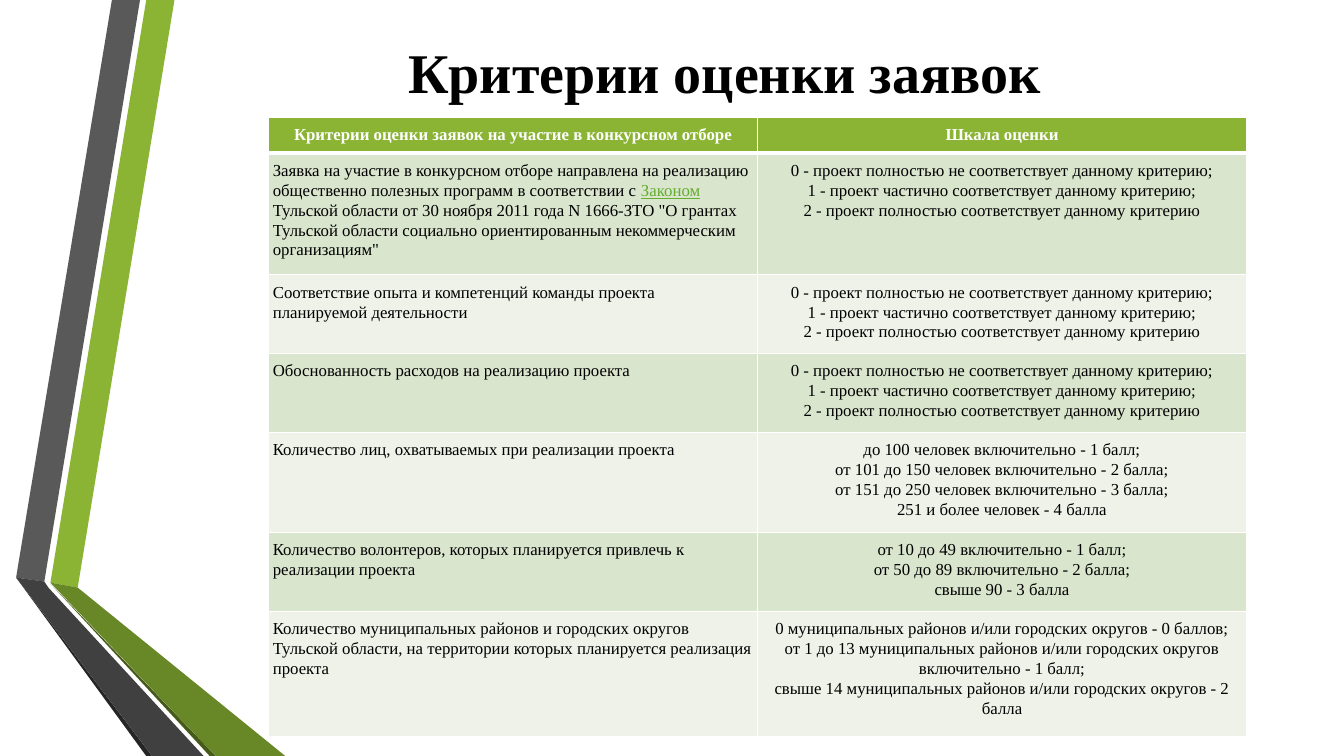
"""Build a slide with a table of grant application criteria beside a folded ribbon."""
import pptx
import pptx.dml.color
import pptx.enum.text
import pptx.oxml
import pptx.oxml.ns
import pptx.util

RGB = pptx.dml.color.RGBColor
ALIGN = pptx.enum.text.PP_ALIGN
FONT = "Times New Roman"
BLACK = RGB(0x00, 0x00, 0x00)
WHITE = RGB(0xFF, 0xFF, 0xFF)
GREEN = RGB(0x8B, 0xB4, 0x34)
OLIVE = RGB(0x68, 0x87, 0x27)
MOSS = RGB(0x46, 0x5A, 0x1A)
GREY = RGB(0x59, 0x59, 0x59)
DARK = RGB(0x40, 0x40, 0x40)
COAL = RGB(0x26, 0x26, 0x26)
LINK = RGB(0x65, 0xAD, 0x30)
BANDS = [RGB(0xEE, 0xF2, 0xE8), RGB(0xDA, 0xE5, 0xCE)]

deck = pptx.Presentation()
deck.slide_width = pptx.util.Inches(13.33)
deck.slide_height = pptx.util.Inches(7.5)
slide = deck.slides.add_slide(deck.slide_layouts[6])


def spot(x, y):
    """Turn percent shares of the slide into lengths."""
    return int(deck.slide_width * x / 100), int(deck.slide_height * y / 100)


def write(par, text, size, color, bold=False):
    """Add one run of text."""
    run = par.add_run()
    run.text = text
    run.font.name = FONT
    run.font.size = pptx.util.Pt(size)
    run.font.bold = bold
    run.font.color.rgb = color
    return run


folds = [
    (GREEN, [(3.75, 77.07), (5.78, 77.73), (12.98, 0), (10.88, 0)]),
    (GREY, [(10.42, 0), (8.33, 0), (1.2, 76.4), (3.3, 76.93)]),
    (COAL, [(1.2, 76.4), (10.88, 100), (11.32, 100)]),
    (MOSS, [(3.75, 77.2), (15.6, 100), (16.05, 100)]),
    (OLIVE, [(3.75, 77.07), (16.05, 100), (21.22, 100), (5.78, 77.73)]),
    (DARK, [(15.15, 100), (3.6, 77.73), (3.3, 76.93), (1.2, 76.4), (11.32, 100)]),
]
for color, points in folds:
    first, *rest = [spot(x, y) for x, y in points]
    path = slide.shapes.build_freeform(*first)
    path.add_line_segments(rest, close=True)
    fold = path.convert_to_shape()
    fold.shadow.inherit = False
    fold.fill.solid()
    fold.fill.fore_color.rgb = color
    fold.line.fill.background()

title = slide.shapes.add_textbox(*spot(13.43, 3.33), *spot(80.95, 12.13)).text_frame
title.word_wrap = True
title.vertical_anchor = pptx.enum.text.MSO_ANCHOR.MIDDLE
title.paragraphs[0].alignment = ALIGN.CENTER
write(title.paragraphs[0], "Критерии оценки заявок", 40, BLACK, True)

scale = [
    "0 - проект полностью не соответствует данному критерию;",
    "1 - проект частично соответствует данному критерию;",
    "2 - проект полностью соответствует данному критерию",
]
rows = [
    (4.67, "Критерии оценки заявок на участие в конкурсном отборе", ["Шкала оценки"]),
    (14, "Заявка на участие в конкурсном отборе направлена на реализацию "
         "общественно полезных программ в соответствии с Законом Тульской области "
         "от 30 ноября 2011 года N 1666-ЗТО \"О грантах Тульской области "
         "социально ориентированным некоммерческим организациям\"", scale),
    (9.07, "Соответствие опыта и компетенций команды проекта планируемой деятельности", scale),
    (9.07, "Обоснованность расходов на реализацию проекта", scale),
    (11.47, "Количество лиц, охватываемых при реализации проекта", [
        "до 100 человек включительно - 1 балл;",
        "от 101 до 150 человек включительно - 2 балла;",
        "от 151 до 250 человек включительно - 3 балла;",
        "251 и более человек - 4 балла"]),
    (9.07, "Количество волонтеров, которых планируется привлечь к реализации проекта", [
        "от 10 до 49 включительно - 1 балл;",
        "от 50 до 89 включительно - 2 балла;",
        "свыше 90 - 3 балла"]),
    (16.53, "Количество муниципальных районов и городских округов Тульской области, "
            "на территории которых планируется реализация проекта", [
        "0 муниципальных районов и/или городских округов - 0 баллов;",
        "от 1 до 13 муниципальных районов и/или городских округов включительно - 1 балл;",
        "свыше 14 муниципальных районов и/или городских округов - 2 балла"]),
]
high = sum(row[0] for row in rows)
table = slide.shapes.add_table(len(rows), 2, *spot(20, 15.53), *spot(72.75, high)).table
for i, (share, left, right) in enumerate(rows):
    table.rows[i].height = spot(0, share)[1]
    for j, lines in enumerate([[left], right]):
        cell = table.cell(i, j)
        cell.margin_left = cell.margin_right = pptx.util.Inches(0.04)
        cell.margin_top = cell.margin_bottom = pptx.util.Inches(0.07)
        cell.fill.solid()
        cell.fill.fore_color.rgb = BANDS[i % 2] if i else GREEN
        for k, line in enumerate(lines):
            par = cell.text_frame.paragraphs[0] if k == 0 else cell.text_frame.add_paragraph()
            par.alignment = ALIGN.LEFT if i and j == 0 else ALIGN.CENTER
            par.line_spacing = 1.07
            for part in filter(None, line.partition("Законом")):
                law = part == "Законом"
                color = LINK if law else BLACK if i else WHITE
                run = write(par, part, 12, color, i == 0)
                if law:
                    run.font.underline = True
        for k, side in enumerate("LRTB"):
            thick = (i, side) in [(0, "B"), (1, "T")]
            edge = pptx.oxml.parse_xml(
                f'<a:ln{side} {pptx.oxml.ns.nsdecls("a")} w="{pptx.util.Pt(3 if thick else 1)}">'
                f'<a:solidFill><a:srgbClr val="{WHITE}"/></a:solidFill></a:ln{side}>')
            cell._tc.get_or_add_tcPr().insert(k, edge)

deck.save("out.pptx")
